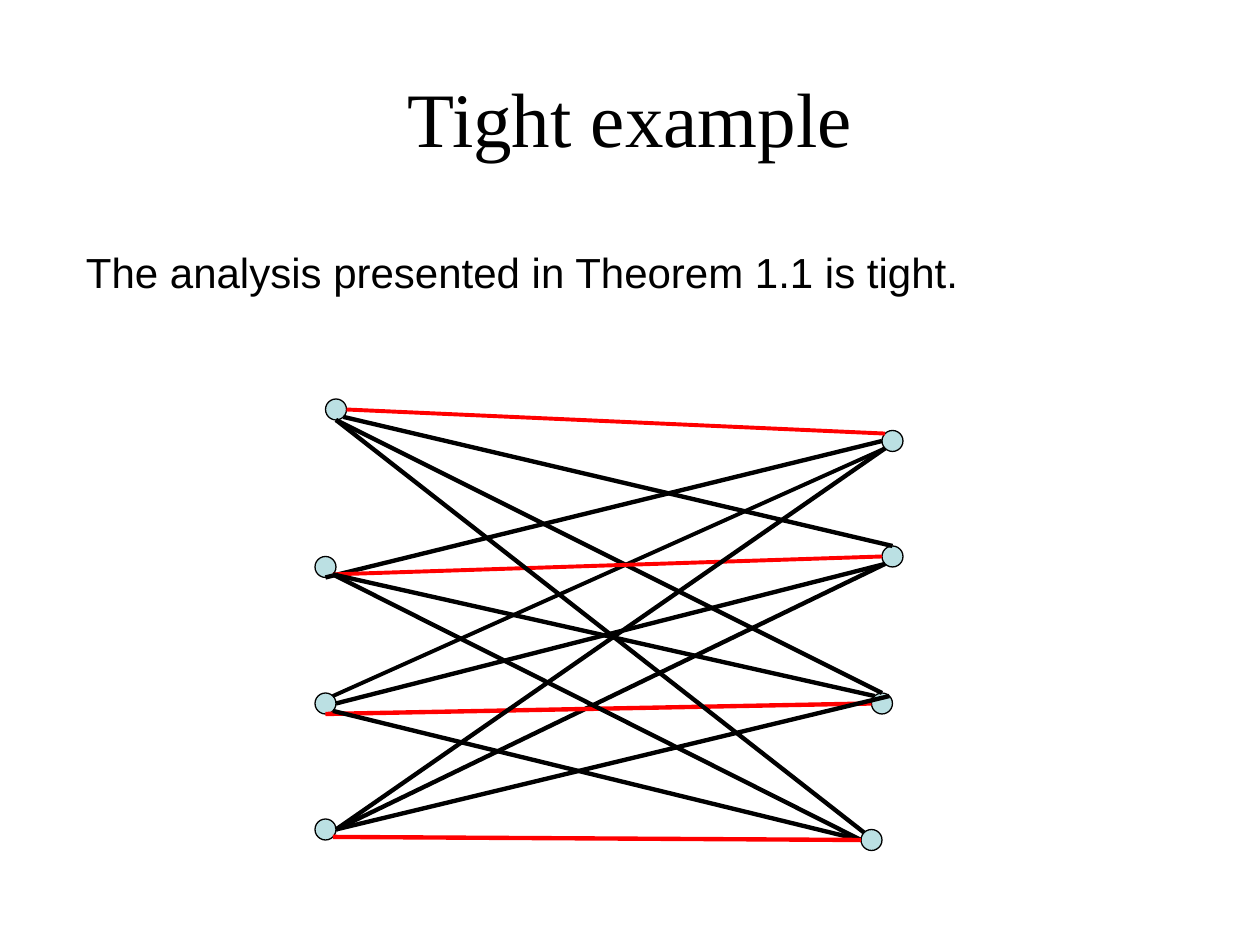
import math

from lxml import etree
from pptx import Presentation
from pptx.dml.color import RGBColor
from pptx.enum import shapes, text
from pptx.oxml import ns
from pptx.util import Pt

COLORS = {"ink": "000000", "node": "BBE0E3", "matching": "FF0000"}
NODE_SIZE = 12
LEFT_NODES = [(6, 0), (0, 90), (0, 168), (0, 240)]
RIGHT_NODES = [(324, 18), (324, 84), (318, 168), (312, 246)]
ANGLES = {
    "right": 0, "lower right": 45, "bottom": 90, "lower left": 135,
    "left": 180, "upper left": 225, "top": 270, "upper right": 315,
}
EDGES = [
    (1, "lower left", 2, "right", 2.5),
    (0, "left", 1, "bottom", 2.5),
    (2, "top", 0, "bottom", 2.5),
    (1, "lower left", 3, "right", 2.5),
    (0, "lower left", 2, "upper right", 2.25),
    (0, "upper left", 0, "right", 2.25),
    (1, "left", 1, "lower right", 2.25),
    (2, "left", 2, "bottom", 2.5),
    (1, "top", 0, "lower right", 2.5),
    (2, "upper right", 3, "right", 2.5),
    (2, "upper left", 1, "lower right", 2.5),
    (3, "upper left", 0, "bottom", 2.5),
    (3, "left", 1, "lower right", 2.5),
    (3, "left", 2, "lower right", 2.5),
    (3, "left", 3, "lower right", 2.5),
    (0, "lower left", 3, "right", 2.5),
]


def color(name):
    return RGBColor.from_string(COLORS[name])


def add_text(slide, box, words, font, size, align, anchor, wrap):
    frame = slide.shapes.add_textbox(*map(Pt, box)).text_frame
    frame.word_wrap = wrap
    frame.vertical_anchor = anchor
    paragraph = frame.paragraphs[0]
    paragraph.alignment = align
    run = paragraph.add_run()
    run.text = words
    run.font.name = font
    run.font.size = Pt(size)
    run.font.color.rgb = color("ink")


def add_title(slide, box):
    add_text(slide, box, "Tight example", "Times New Roman", 44,
             text.PP_ALIGN.CENTER, text.MSO_ANCHOR.MIDDLE, True)


def add_statement(slide, box):
    add_text(slide, box, "The analysis presented in Theorem 1.1 is tight.",
             "Arial", 24, text.PP_ALIGN.LEFT, text.MSO_ANCHOR.TOP, False)


def add_node(slide, x, y):
    node = slide.shapes.add_shape(
        shapes.MSO_SHAPE.OVAL, Pt(x), Pt(y), Pt(NODE_SIZE), Pt(NODE_SIZE))
    node.shadow.inherit = False
    node.fill.solid()
    node.fill.fore_color.rgb = color("node")
    node.line.color.rgb = color("ink")
    node.line.width = Pt(0.75)


def rim_point(node, side):
    radius = NODE_SIZE / 2
    angle = math.radians(ANGLES[side])
    return (node[0] + radius + radius * math.cos(angle),
            node[1] + radius + radius * math.sin(angle))


def add_edge(slide, start, end, color_name, width):
    edge = slide.shapes.add_connector(
        shapes.MSO_CONNECTOR.STRAIGHT, *map(Pt, start + end))
    edge.line.color.rgb = color(color_name)
    edge.line.width = Pt(width)
    etree.SubElement(edge._element.spPr, ns.qn("a:effectLst"))


def add_bipartite_graph(slide, box):
    left, top = box[:2]
    left_nodes, right_nodes = (
        [(left + x, top + y) for x, y in side]
        for side in (LEFT_NODES, RIGHT_NODES))
    for node in left_nodes + right_nodes:
        add_node(slide, *node)
    for right, right_side, left_index, left_side, width in EDGES:
        add_edge(slide,
                 rim_point(right_nodes[right], right_side),
                 rim_point(left_nodes[left_index], left_side),
                 "matching" if right == left_index else "ink", width)


def main():
    deck = Presentation()
    deck.slide_width, deck.slide_height = Pt(720), Pt(540)
    slide = deck.slides.add_slide(deck.slide_layouts[6])
    add_title(slide, (36, 21.6, 648, 90))
    add_bipartite_graph(slide, (180, 228, 336, 258))
    add_statement(slide, (42, 137.5, 525, 36))
    deck.save("out.pptx")


if __name__ == "__main__":
    main()
